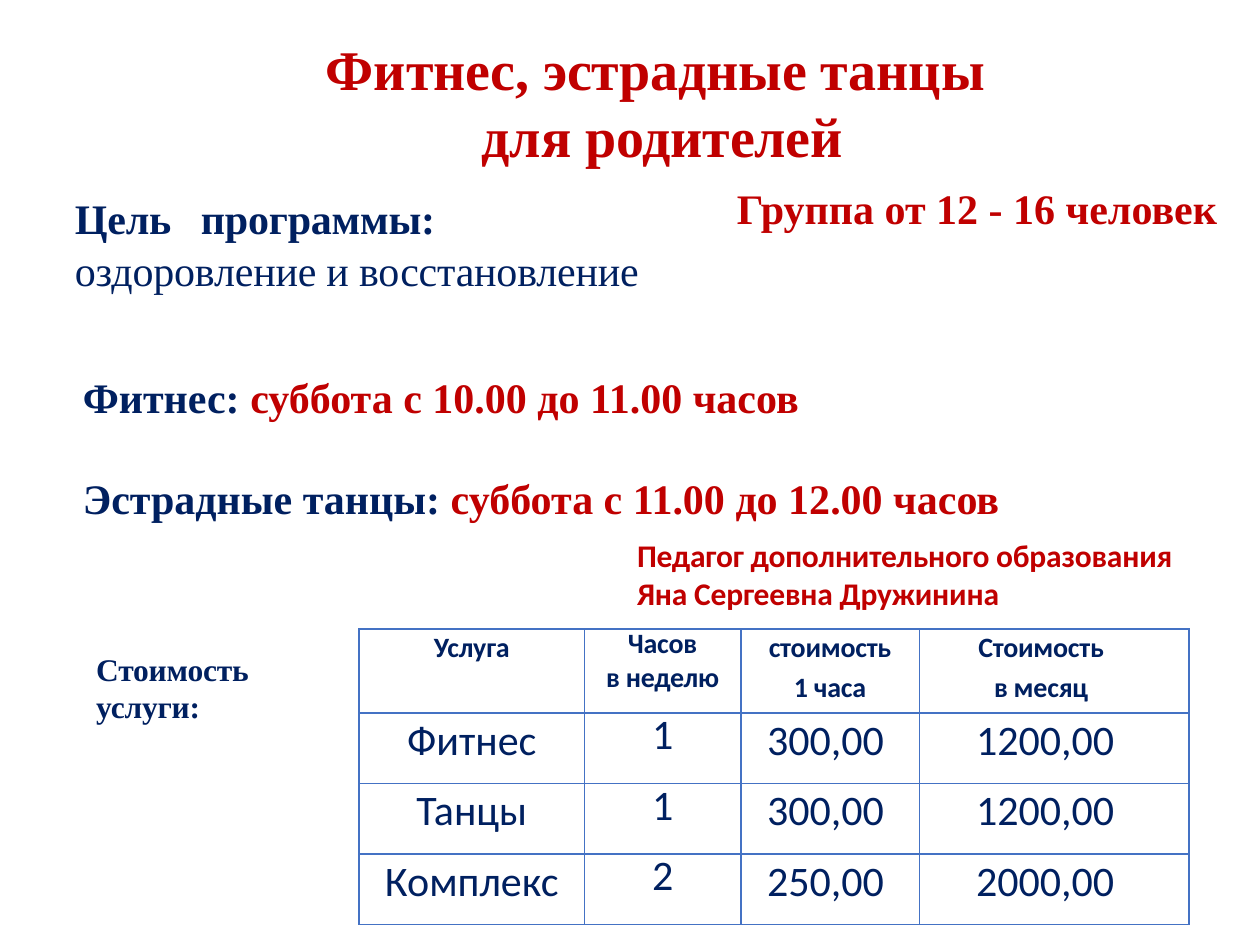
from pptx import Presentation
from pptx.dml.color import RGBColor
from pptx.enum.text import MSO_ANCHOR, MSO_AUTO_SIZE, PP_ALIGN
from pptx.oxml.ns import qn
from pptx.util import Pt
from lxml import etree

CENTER, LEFT = PP_ALIGN.CENTER, PP_ALIGN.LEFT
BOTTOM, TOP = MSO_ANCHOR.BOTTOM, MSO_ANCHOR.TOP
GROW = MSO_AUTO_SIZE.SHAPE_TO_FIT_TEXT
TIMES, CALIBRI = "Times New Roman", "Calibri"
RED, NAVY, BLUE = "C00000", "002060", "4472C4"

TITLE = "Фитнес, эстрадные танцы \vдля родителей"
GOAL = [("Цель\tпрограммы:", True), ("оздоровление и восстановление", False)]
GROUP = "Группа от 12 - 16 человек"
SCHEDULE = [("Фитнес: ", "суббота с 10.00 до 11.00 часов"),
            ("Эстрадные танцы: ", "суббота с 11.00 до 12.00 часов")]
TEACHER = ["Педагог дополнительного образования", "Яна Сергеевна Дружинина"]
PRICE_LABEL = ["Стоимость", "услуги:"]
HEADERS = ["Услуга", "Часов\nв неделю", "стоимость\n1 часа", "Стоимость\nв месяц"]
PRICES = [("Фитнес", "1", "300,00", "1200,00"),
          ("Танцы", "1", "300,00", "1200,00"),
          ("Комплекс", "2", "250,00", "2000,00")]
COL_WIDTHS = [128.8, 89.4, 102, 194.2 - 40]
ROW_HEIGHTS = [48.2, 40.3, 40.3, 40.3]
INDENTS = [0, 0, 15, 32.5]


def rgb(value):
    return RGBColor.from_string(value)


def style(run, font, size, color, bold=True, spacing=0):
    f = run.font
    f.name, f.size, f.bold = font, Pt(size), bold
    f.color.rgb = rgb(color)
    run._r.get_or_add_rPr().set("spc", str(round(spacing * 100)))


def add_text(tf, lines, font, size, color, bold=True, spacing=0, align=LEFT):
    for i, line in enumerate(lines):
        p = tf.paragraphs[0] if i == 0 else tf.add_paragraph()
        p.text = line
        p.alignment = align
        for r in p.runs:
            style(r, font, size, color, bold, spacing)


def set_margins(frame, left, top, right=0):
    frame.margin_left, frame.margin_top = Pt(left), Pt(top)
    frame.margin_right = frame.margin_bottom = Pt(0)
    if right:
        frame.margin_right = Pt(right)


def add_box(s, x, y, w, h, wrap=True):
    tf = s.shapes.add_textbox(Pt(x), Pt(y), Pt(w), Pt(h)).text_frame
    tf.word_wrap = wrap
    tf.auto_size = GROW
    return tf


def add_borders(cell, color, width):
    tcPr = cell._tc.get_or_add_tcPr()
    for side in ("a:lnL", "a:lnR", "a:lnT", "a:lnB"):
        ln = etree.SubElement(tcPr, qn(side), w=str(Pt(width)))
        fill = etree.SubElement(ln, qn("a:solidFill"))
        etree.SubElement(fill, qn("a:srgbClr"), val=color)


def add_prices(s, x, y):
    table = s.shapes.add_table(len(PRICES) + 1, len(HEADERS), Pt(x), Pt(y),
                               Pt(sum(COL_WIDTHS)), Pt(sum(ROW_HEIGHTS))).table
    table.first_row = table.horz_banding = False
    for col, width in zip(table.columns, COL_WIDTHS):
        col.width = Pt(width)
    for row, height in zip(table.rows, ROW_HEIGHTS):
        row.height = Pt(height)
    for i, values in enumerate([HEADERS, *PRICES]):
        header = i == 0
        for j, value in enumerate(values):
            cell = table.cell(i, j)
            hours, indent = j == 1, INDENTS[j]
            set_margins(cell, 0 if header else indent, 0 if hours else 1.4,
                        15 if header and j == 3 else 0)
            add_text(cell.text_frame, value.split("\n"), CALIBRI, 16 if header else 24,
                     NAVY, header, -0.1 if header else 0,
                     CENTER if header or not indent else LEFT)
            paragraphs = cell.text_frame.paragraphs
            if hours:
                paragraphs[0].line_spacing = Pt(18.2 if header else 27.4)
            for p in paragraphs[1:]:
                p.space_before = Pt(0.1 if hours else 2.9)
            add_borders(cell, BLUE, 1)
            cell.fill.background()


def main():
    prs = Presentation()
    prs.slide_width, prs.slide_height = Pt(720), Pt(540)
    s = prs.slides.add_slide(prs.slide_layouts[5])

    title = s.shapes.title
    title.left, title.top, title.width, title.height = Pt(60), Pt(18), Pt(636), Pt(78.5)
    tf = title.text_frame
    tf.word_wrap = True
    tf.vertical_anchor = BOTTOM
    set_margins(tf, 1, 1)
    add_text(tf, [TITLE], TIMES, 32, RED, spacing=-0.1, align=CENTER)

    tf = add_box(s, 41.8, 108, 638, 60.5)
    set_margins(tf, 1, 2)
    add_text(tf, [text for text, _ in GOAL], TIMES, 24, NAVY, spacing=-0.1)
    for p, (_, bold) in zip(tf.paragraphs, GOAL):
        p.runs[0].font.bold = bold
    tf.paragraphs[1].space_before = Pt(1)
    pPr = tf.paragraphs[0]._p.get_or_add_pPr()
    tabs = etree.SubElement(pPr, qn("a:tabLst"))
    etree.SubElement(tabs, qn("a:tab"), pos=str(Pt(72)), algn="l")

    add_prices(s, 205.2, 359.3)

    tf = add_box(s, 54, 372.2, 130.3, 43.2)
    set_margins(tf, 1, 0)
    add_text(tf, PRICE_LABEL, TIMES, 18, NAVY, spacing=-0.1)
    tf.paragraphs[0].line_spacing = Pt(20.6)

    tf = add_box(s, 414, 100.8, 291, 36, wrap=False)
    add_text(tf, [GROUP], TIMES, 24, RED)

    tf = add_box(s, 40.3, 180, 543, 123.8, wrap=False)
    add_text(tf, [name for name, _ in SCHEDULE], TIMES, 24, NAVY)
    for p, (_, time) in zip(tf.paragraphs, SCHEDULE):
        p.line_spacing = 2
        r = p.add_run()
        r.text = time
        style(r, TIMES, 24, RED)

    tf = add_box(s, 357, 303, 363, 51)
    add_text(tf, TEACHER, CALIBRI, 18, RED, spacing=-0.1)

    prs.save("out.pptx")


if __name__ == "__main__":
    main()
